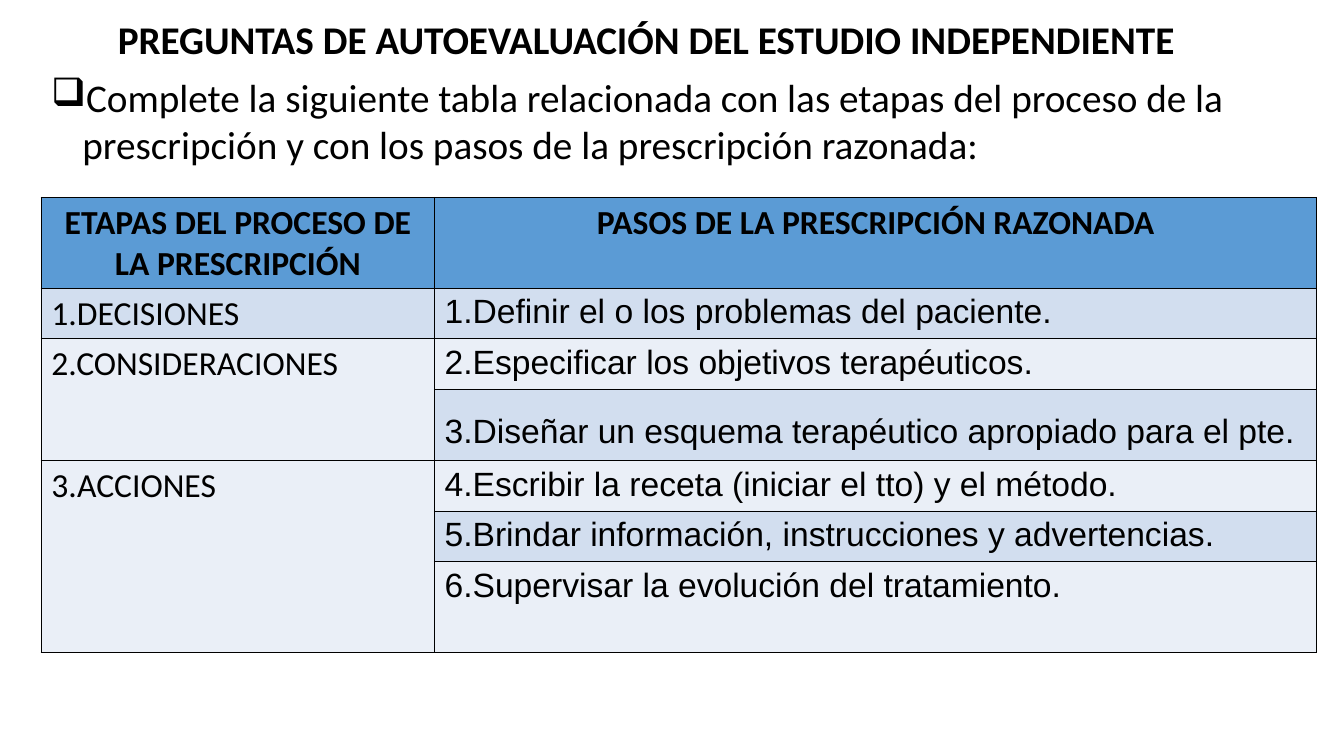
"""Builds the self-assessment slide on the stages and steps of prescribing."""
from lxml import etree
from pptx import Presentation
from pptx import util as u
from pptx.dml.color import RGBColor
from pptx.enum import text
from pptx.oxml import ns

PX = 9144
BLACK = RGBColor(0x00, 0x00, 0x00)
HEADER_BLUE = RGBColor(0x5B, 0x9B, 0xD5)
BANDS = (RGBColor(0xEA, 0xEF, 0xF7), RGBColor(0xD2, 0xDE, 0xEF))

COLUMN_WIDTHS = (390, 875)
ROW_HEIGHTS = (90, 50, 50, 71, 50, 50, 90)
HEADINGS = ("ETAPAS DEL PROCESO DE LA PRESCRIPCIÓN", "PASOS DE LA PRESCRIPCIÓN RAZONADA")
STAGES = (
    ("1.DECISIONES", ("1.Definir el o los problemas del paciente.",)),
    ("2.CONSIDERACIONES", (
        "2.Especificar los objetivos terapéuticos.",
        "3.Diseñar un esquema terapéutico apropiado para el pte.",
    )),
    ("3.ACCIONES", (
        "4.Escribir la receta (iniciar el tto) y el método.",
        "5.Brindar información, instrucciones y advertencias.",
        "6.Supervisar la evolución del tratamiento.",
    )),
)
SPACED_ROW = 3


def px(length):
    """Turn px into EMU."""
    return u.Emu(length * PX)


def add_run(paragraph, wording, size, font="Calibri", bold=False):
    """Add one formatted run to a paragraph."""
    run = paragraph.add_run()
    run.text = wording
    run.font.size = u.Pt(size)
    run.font.name = font
    run.font.bold = bold
    run.font.color.rgb = BLACK


def add_text(slide, box, wording, bold=False):
    """Add a wrapped text box and return its paragraph."""
    frame = slide.shapes.add_textbox(*map(px, box)).text_frame
    frame.word_wrap = True
    frame.auto_size = text.MSO_AUTO_SIZE.SHAPE_TO_FIT_TEXT
    paragraph = frame.paragraphs[0]
    add_run(paragraph, wording, 28, bold=bold)
    return paragraph


def add_bullet(paragraph, mark, indent):
    """Give a paragraph a hanging bullet."""
    properties = paragraph._p.get_or_add_pPr()
    properties.set("marL", str(px(indent)))
    properties.set("indent", str(-px(indent)))
    etree.SubElement(properties, ns.qn("a:buChar"), char=mark)


def style_cell(cell, fill):
    """Give a cell thin black borders and a solid fill."""
    properties = cell._tc.get_or_add_tcPr()
    for side in ("lnL", "lnR", "lnT", "lnB"):
        border = etree.SubElement(properties, ns.qn(f"a:{side}"), w=str(u.Pt(1)))
        paint = etree.SubElement(border, ns.qn("a:solidFill"))
        etree.SubElement(paint, ns.qn("a:srgbClr"), val=str(BLACK))
    cell.fill.solid()
    cell.fill.fore_color.rgb = fill


def add_stages_table(slide):
    """Add the table of stages, each spanning its steps."""
    size = (sum(COLUMN_WIDTHS), sum(ROW_HEIGHTS))
    table = slide.shapes.add_table(
        len(ROW_HEIGHTS), len(COLUMN_WIDTHS), *map(px, (41, 196, *size))).table
    for column, width in zip(table.columns, COLUMN_WIDTHS):
        column.width = px(width)
    for index, height in enumerate(ROW_HEIGHTS):
        table.rows[index].height = px(height)
        for cell in table.rows[index].cells:
            style_cell(cell, BANDS[index % 2] if index else HEADER_BLUE)

    for column, heading in enumerate(HEADINGS):
        paragraph = table.cell(0, column).text_frame.paragraphs[0]
        paragraph.alignment = text.PP_ALIGN.CENTER
        add_run(paragraph, heading, 24, bold=True)

    row = 1
    for stage, steps in STAGES:
        stage_cell = table.cell(row, 0)
        if len(steps) > 1:
            stage_cell.merge(table.cell(row + len(steps) - 1, 0))
        add_run(stage_cell.text_frame.paragraphs[0], stage, 24)
        for step in steps:
            paragraph = table.cell(row, 1).text_frame.paragraphs[0]
            add_run(paragraph, step, 24, font="Arial")
            if row == SPACED_ROW:
                paragraph.line_spacing = 1.5
            row += 1


def main():
    """Build and save the slide."""
    deck = Presentation()
    deck.slide_width, deck.slide_height = px(1333), px(750)
    slide = deck.slides.add_slide(deck.slide_layouts[6])
    add_text(slide, (107, 10, 1094, 57),
             "PREGUNTAS DE AUTOEVALUACIÓN DEL ESTUDIO INDEPENDIENTE", bold=True)
    add_stages_table(slide)
    task = add_text(
        slide, (41, 68, 1227, 104),
        "Complete la siguiente tabla relacionada con las etapas del proceso de la "
        "prescripción y con los pasos de la prescripción razonada:")
    add_bullet(task, "❑", 31)
    deck.save("out.pptx")


if __name__ == "__main__":
    main()
